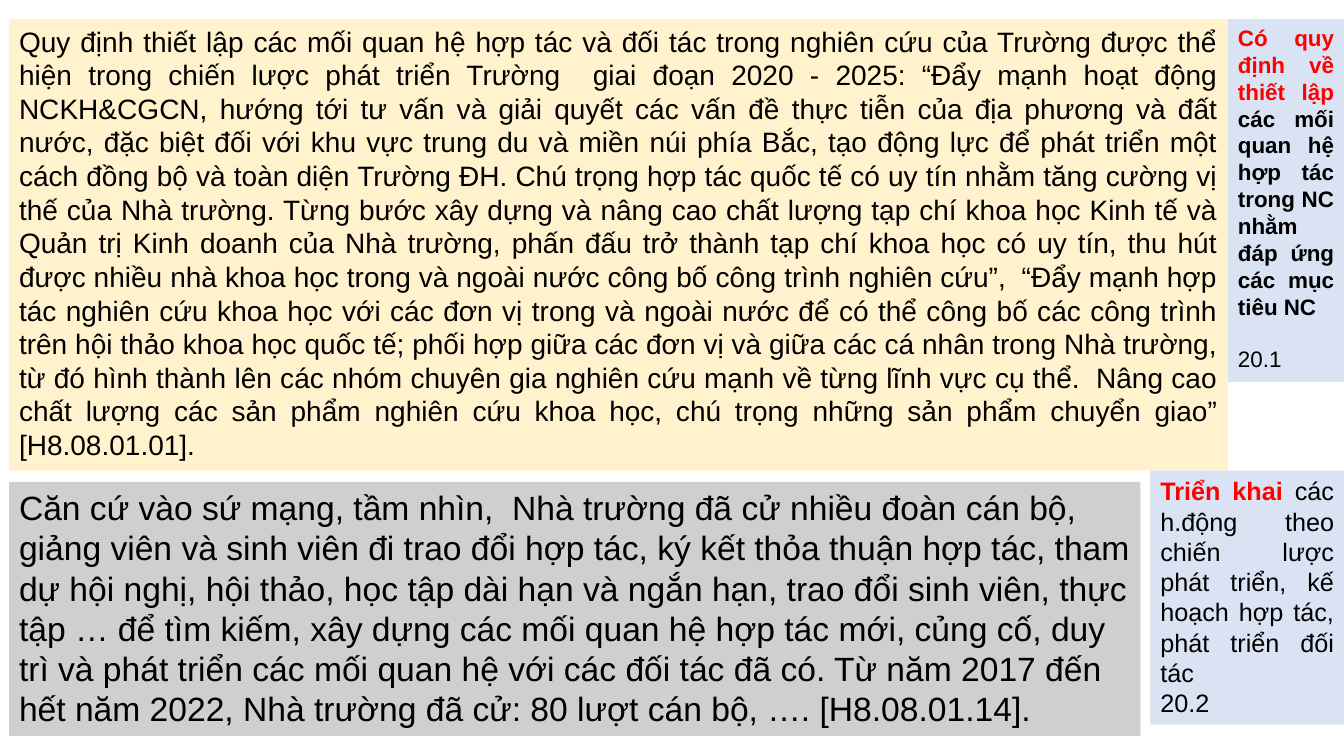
from dataclasses import dataclass

from pptx import Presentation
from pptx.dml.color import RGBColor as Rgb
from pptx.enum.text import MSO_AUTO_SIZE as Fit, PP_ALIGN as Align
from pptx.slide import Slide
from pptx.util import Emu, Pt

SCALE = 9144  # EMU per px, 100 px to the inch
WIDE, HIGH = 1333, 750
LEFT, TOP = 9, 19
SPLIT = 467  # bottom of the first panel, top of the second note
FONT = "Arial"
COLORS = {
    "cream": "FFF2CC",
    "blue": "DAE3F3",
    "gray": "D0CECE",
    "red": "FF0000",
    "black": "000000",
}


@dataclass(frozen=True)
class Span:
    text: str
    color: str = "black"
    bold: bool = False


@dataclass(frozen=True)
class Para:
    spans: tuple[Span, ...]
    before: float = 0


@dataclass(frozen=True)
class Panel:
    left: int
    top: int
    width: int
    height: int
    fill: str
    size: int
    paras: tuple[Para, ...]
    align: Align = Align.JUSTIFY


# Wording
GOALS = (
    "Quy định thiết lập các mối quan hệ hợp tác và đối tác trong nghiên cứu của Trường "
    "được thể hiện trong chiến lược phát triển Trường  giai đoạn 2020 - 2025: “Đẩy mạnh "
    "hoạt động NCKH&CGCN, hướng tới tư vấn và giải quyết các vấn đề thực tiễn của địa "
    "phương và đất nước, đặc biệt đối với khu vực trung du và miền núi phía Bắc, tạo động "
    "lực để phát triển một cách đồng bộ và toàn diện Trường ĐH. Chú trọng hợp tác quốc tế "
    "có uy tín nhằm tăng cường vị thế của Nhà trường. "
)
MEANS = (
    "Từng bước xây dựng và nâng cao chất "
    "lượng tạp chí khoa học Kinh tế và Quản trị Kinh doanh của Nhà trường, phấn đấu trở "
    "thành tạp chí khoa học có uy tín, thu hút được nhiều nhà khoa học trong và ngoài nước "
    "công bố công trình nghiên cứu”,  “Đẩy mạnh hợp tác nghiên cứu khoa học với các đơn vị "
    "trong và ngoài nước để có thể công bố các công trình trên hội thảo khoa học quốc tế; "
    "phối hợp giữa các đơn vị và giữa các cá nhân trong Nhà trường, từ đó hình thành lên "
    "các nhóm chuyên gia nghiên cứu mạnh về từng lĩnh vực cụ thể.  Nâng cao chất lượng các "
    "sản phẩm nghiên cứu khoa học, chú trọng những sản phẩm chuyển giao” [H8.08.01.01]."
)
ACTION = (
    "Căn cứ vào sứ mạng, tầm nhìn,  Nhà trường đã cử nhiều đoàn cán bộ, giảng viên và sinh "
    "viên đi trao đổi hợp tác, ký kết thỏa thuận hợp tác, tham dự hội nghị, hội thảo, học "
    "tập dài hạn và ngắn hạn, trao đổi sinh viên, thực tập … để tìm kiếm, xây dựng các mối "
    "quan hệ hợp tác mới, củng cố, duy trì và phát triển các mối quan hệ với các đối tác "
    "đã có. Từ năm 2017 đến hết năm 2022, Nhà trường đã cử: 80 lượt cán bộ, …. "
    "[H8.08.01.14]."
)
RULE_NOTE = (
    Para((
        Span("Có quy định về thiết lập ", "red", True),
        Span("các mối quan hệ hợp tác trong NC nhằm đáp ứng các mục tiêu NC", bold=True),
    )),
    Para((Span("20.1"),), before=18.4),
)
ACTION_NOTE = (
    Para((
        Span("Triển khai ", "red", True),
        Span("các h.động theo chiến lược phát triển, kế hoạch hợp tác, phát triển đối tác"),
    )),
    Para((Span("20.2"),)),
)

# Panels with their side notes
PANELS = (
    Panel(LEFT, TOP, 1209, SPLIT - TOP, "cream", 20, (Para((Span(GOALS), Span(MEANS))),)),
    Panel(1218, TOP, WIDE - 1218, 360, "blue", 16, RULE_NOTE),
    Panel(LEFT, 478, 1122, 252, "gray", 24, (Para((Span(ACTION),)),), Align.LEFT),
    Panel(1141, SPLIT, WIDE - 1141, 252, "blue", 18, ACTION_NOTE),
)


def px(num: int) -> Emu:
    return Emu(num * SCALE)


def tint(name: str) -> Rgb:
    return Rgb.from_string(COLORS[name])


def draw(slide: Slide, panel: Panel) -> None:
    box = slide.shapes.add_textbox(
        px(panel.left), px(panel.top), px(panel.width), px(panel.height)
    )
    box.fill.solid()
    box.fill.fore_color.rgb = tint(panel.fill)
    frame = box.text_frame
    frame.word_wrap = True
    frame.auto_size = Fit.SHAPE_TO_FIT_TEXT
    frame.text = "\n".join("".join(s.text for s in p.spans) for p in panel.paras)
    for line, para in zip(frame.paragraphs, panel.paras):
        line.alignment = panel.align
        line.space_before = Pt(para.before)
        # Split the line into its spans
        line.clear()
        for span in para.spans:
            run = line.add_run()
            run.text = span.text
            font = run.font
            font.name, font.size, font.bold = FONT, Pt(panel.size), span.bold
            font.color.rgb = tint(span.color)


def main() -> None:
    deck = Presentation()
    deck.slide_width, deck.slide_height = px(WIDE), px(HIGH)
    slide = deck.slides.add_slide(deck.slide_layouts.get_by_name("Blank"))
    for panel in PANELS:
        draw(slide, panel)
    deck.save("out.pptx")


if __name__ == "__main__":
    main()
